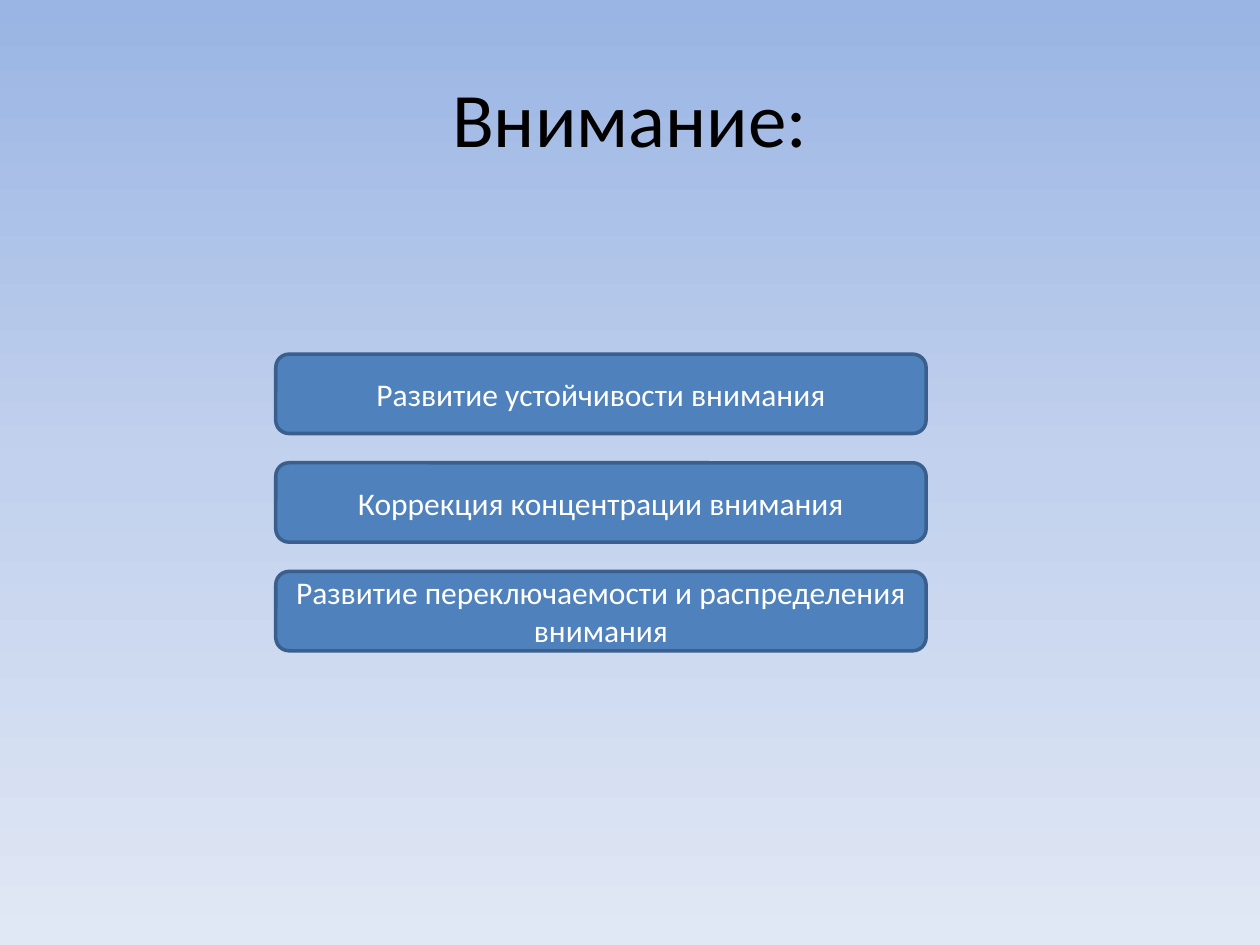
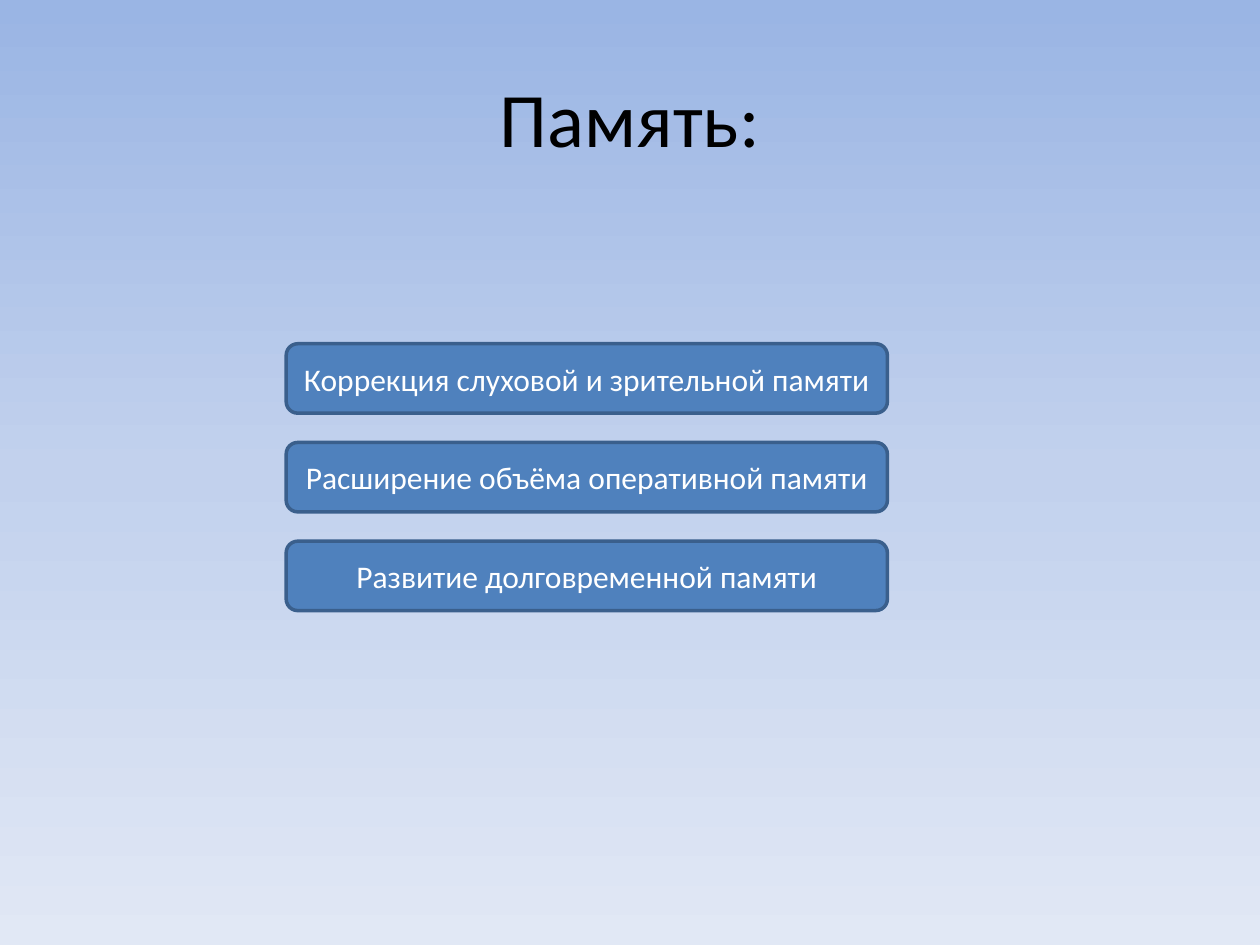
from dataclasses import dataclass

from pptx import Presentation
from pptx.dml.color import RGBColor
from pptx.enum.shapes import MSO_SHAPE
from pptx.enum.text import MSO_ANCHOR, PP_ALIGN
from pptx.oxml import parse_xml
from pptx.oxml.ns import nsdecls
from pptx.shapes.base import BaseShape
from pptx.slide import Slide
from pptx.util import Cm, Pt

FONT = "Calibri"
BLACK, WHITE = "000000", "FFFFFF"
BLUE, EDGE = "4F81BD", "3A5F8C"
SKY = {0: "9AB5E4", 50: "C2D1ED", 100: "E1E8F5"}
GAP = 0.59


@dataclass(frozen=True)
class Topic:
    """A title over a stack of equal boxes; lengths in centimetres."""
    title: str
    left: float
    top: float
    width: float
    height: float
    goals: tuple[str, ...]


TOPICS = (
    Topic("Внимание:", 5.56, 7.14, 13.11, 1.6, (
        "Развитие устойчивости внимания",
        "Коррекция концентрации внимания",
        "Развитие переключаемости и распределения внимания",
    )),
    Topic("Память:", 5.77, 6.93, 12.12, 1.4, (
        "Коррекция слуховой и зрительной памяти",
        "Расширение объёма оперативной памяти",
        "Развитие долговременной памяти",
    )),
)


def color(code: str) -> RGBColor:
    return RGBColor.from_string(code)


def paint_sky(slide: Slide) -> None:
    """Fill the background with a gradient running from top to bottom."""
    stops = "".join(
        f'<a:gs pos="{share * 1000}"><a:srgbClr val="{code}"/></a:gs>'
        for share, code in SKY.items()
    )
    sky = parse_xml(
        f'<p:bg {nsdecls("p", "a")}><p:bgPr><a:gradFill rotWithShape="1">'
        f'<a:gsLst>{stops}</a:gsLst><a:lin ang="5400000" scaled="0"/>'
        '</a:gradFill><a:effectLst/></p:bgPr></p:bg>'
    )
    slide.element.cSld.insert(0, sky)


def write(shape: BaseShape, text: str, size: int, code: str) -> None:
    frame = shape.text_frame
    frame.word_wrap = True
    frame.vertical_anchor = MSO_ANCHOR.MIDDLE
    line = frame.paragraphs[0]
    line.alignment = PP_ALIGN.CENTER
    run = line.add_run()
    run.text = text
    run.font.name = FONT
    run.font.size = Pt(size)
    run.font.color.rgb = color(code)


def add_title(slide: Slide, text: str) -> None:
    box = slide.shapes.add_textbox(Cm(1.27), Cm(0.76), Cm(22.86), Cm(3.18))
    write(box, text, 44, BLACK)


def add_goals(slide: Slide, topic: Topic) -> None:
    for row, goal in enumerate(topic.goals):
        top = topic.top + row * (topic.height + GAP)
        box = slide.shapes.add_shape(
            MSO_SHAPE.ROUNDED_RECTANGLE,
            Cm(topic.left), Cm(top), Cm(topic.width), Cm(topic.height),
        )
        box.shadow.inherit = False
        box.fill.solid()
        box.fill.fore_color.rgb = color(BLUE)
        box.line.color.rgb = color(EDGE)
        box.line.width = Pt(2)
        write(box, goal, 18, WHITE)


def main() -> None:
    deck = Presentation()
    deck.slide_width, deck.slide_height = Cm(25.4), Cm(19.05)
    blank = deck.slide_layouts[6]
    for topic in TOPICS:
        slide = deck.slides.add_slide(blank)
        paint_sky(slide)
        add_title(slide, topic.title)
        add_goals(slide, topic)
    deck.save("out.pptx")


if __name__ == "__main__":
    main()
